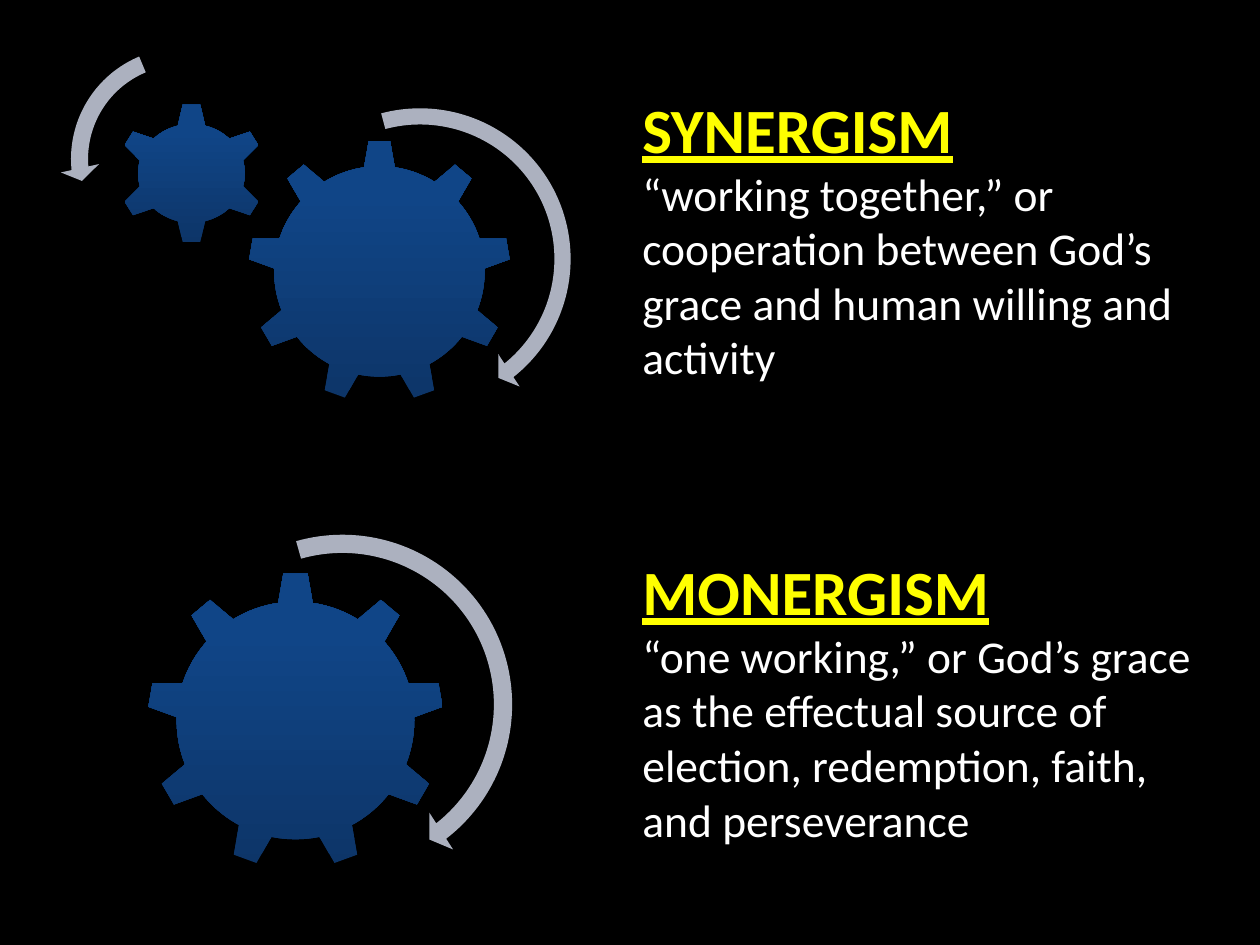
from pptx import Presentation
from pptx.dml.color import RGBColor
from pptx.enum.shapes import MSO_SHAPE
from pptx.enum.text import MSO_AUTO_SIZE
from pptx.util import Pt

SCALE = 914400 / 126  # EMU in one px
COLORS = {
    "back": "000000",
    "head": "FFFF00",
    "text": "FFFFFF",
    "low": "0D3568",
    "high": "104587",
    "arrow": "ACB1BF",
}


def px(*sizes):
    return [round(size * SCALE) for size in sizes]


def color(name):
    return RGBColor.from_string(COLORS[name])


class Deck:
    font = "Calibri"

    def __init__(self, wide, high):
        self.prs = Presentation()
        self.prs.slide_width, self.prs.slide_height = px(wide, high)
        self.slide = None

    def page(self):
        self.slide = self.prs.slides.add_slide(self.prs.slide_layouts[6])
        fill = self.slide.background.fill
        fill.solid()
        fill.fore_color.rgb = color("back")

    def group(self):
        return self.slide.shapes.add_group_shape()

    def shape(self, group, kind, box):
        item = group.shapes.add_shape(kind, *px(*box))
        item.shadow.inherit = False
        item.line.fill.background()
        return item

    def gear(self, group, kind, box):
        fill = self.shape(group, kind, box).fill
        fill.gradient()
        fill.gradient_angle = 90
        for stop, name, place in zip(fill.gradient_stops, ("low", "high"), (0, 0.8)):
            stop.color.rgb = color(name)
            stop.position = place

    def arrow(self, group, kind, box, adjusts):
        item = self.shape(group, kind, box)
        item.fill.solid()
        item.fill.fore_color.rgb = color("arrow")
        for index, value in enumerate(adjusts):
            item.adjustments[index] = value

    def term(self, box, head, text):
        frame = self.slide.shapes.add_textbox(*px(*box)).text_frame
        frame.word_wrap = True
        frame.auto_size = MSO_AUTO_SIZE.SHAPE_TO_FIT_TEXT
        frame.text = f"{head}\n{text}"
        styles = ((36, "head", True), (26, "text", False))
        for para, (size, name, strong) in zip(frame.paragraphs, styles):
            font = para.runs[0].font
            font.name, font.size = self.font, Pt(size)
            font.bold = font.underline = strong
            font.color.rgb = color(name)


def main():
    deck = Deck(1260, 945)
    deck.page()

    # Terms and their meanings
    deck.term((630, 84, 577, 310), "SYNERGISM",
              "“working together,” or cooperation between God’s grace "
              "and human willing and activity")
    deck.term((630, 546, 599, 310), "MONERGISM",
              "“one working,” or God’s grace as the effectual source of "
              "election, redemption, faith, and perseverance")

    # Two gears that turn together
    pair = deck.group()
    deck.gear(pair, MSO_SHAPE.GEAR_9, (248, 140, 263, 263))
    deck.gear(pair, MSO_SHAPE.GEAR_6, (117, 103, 149, 141))
    deck.arrow(pair, MSO_SHAPE.CIRCULAR_ARROW, (258, 97, 324, 324),
               (0.05, 3.13, 30.83, 153.05, 0.06))
    deck.arrow(pair, MSO_SHAPE.LEFT_CIRCULAR_ARROW, (60, 37, 244, 244),
               (0.07, 4.3, 104.89, 148.38, 0.08))

    # One gear that turns alone
    single = deck.group()
    deck.gear(single, MSO_SHAPE.GEAR_9, (147, 572, 297, 297))
    deck.arrow(single, MSO_SHAPE.CIRCULAR_ARROW, (160, 522, 365, 365),
               (0.05, 3.13, 31.22, 152.5, 0.06))

    deck.prs.save("out.pptx")


if __name__ == "__main__":
    main()
